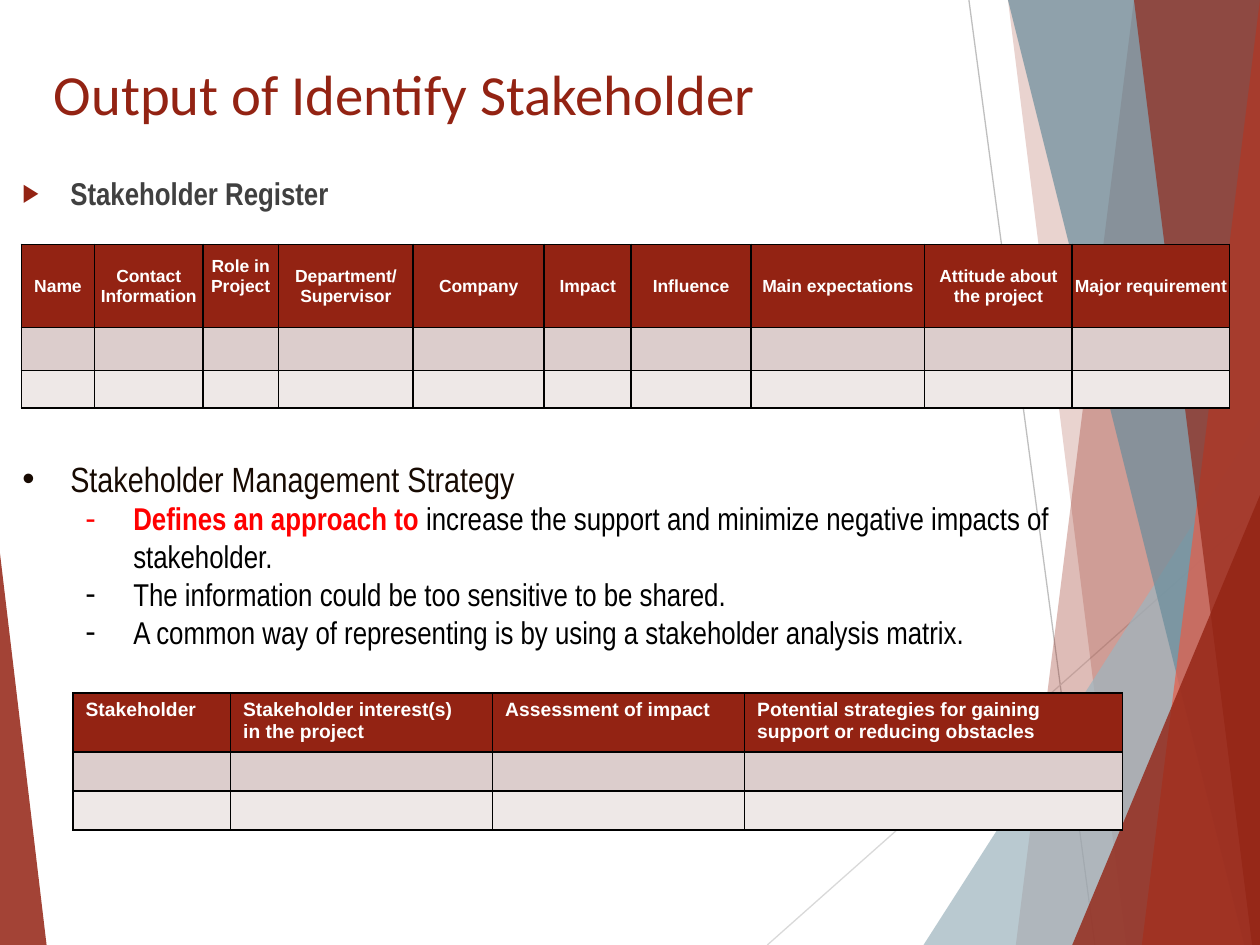
from lxml import etree
from pptx import Presentation
from pptx.dml.color import RGBColor
from pptx.enum.shapes import MSO_CONNECTOR, MSO_SHAPE
from pptx.enum.text import MSO_ANCHOR, PP_ALIGN
from pptx.oxml.ns import qn
from pptx.util import Inches, Pt

STRAIGHT = MSO_CONNECTOR.STRAIGHT
TRIANGLE = MSO_SHAPE.ISOSCELES_TRIANGLE
TOP, MIDDLE = MSO_ANCHOR.TOP, MSO_ANCHOR.MIDDLE
LEFT, CENTER = PP_ALIGN.LEFT, PP_ALIGN.CENTER

WIDTH, HEIGHT = 10, 7.5
BRICK = "932313"
BODY_FONT = "Arial Narrow"
ROW_FILLS = (BRICK, "DCCDCC", "EEE8E7")


def color(value):
    return RGBColor.from_string(value)


def sub(parent, tag, **attributes):
    return etree.SubElement(parent, qn(tag), attributes)


def paint(shape, fill, opacity):
    """Give a shape a translucent fill, no outline and no shadow."""
    shape.shadow.inherit = False
    shape.line.fill.background()
    shape.fill.solid()
    shape.fill.fore_color.rgb = color(fill)
    rgb = shape.fill._xPr.find(qn("a:solidFill"))[0]
    sub(rgb, "a:alpha", val=str(opacity * 1000))


def style(span, size, font, ink, bold=False):
    span.font.size = Pt(size)
    span.font.name = font
    span.font.color.rgb = color(ink)
    span.font.bold = bold


def add_ray(page, start, end, ink):
    ray = page.shapes.add_connector(STRAIGHT, *(Inches(v) for v in start + end))
    ray.line.color.rgb = color(ink)
    ray.line.width = Pt(0.75)
    sub(ray._element.spPr, "a:effectLst")


def add_band(page, top_left, bottom_left, fill, opacity):
    """A full-height band that reaches the right edge of the page."""
    builder = page.shapes.build_freeform(top_left, 0, scale=Inches(1))
    builder.add_line_segments(
        [(WIDTH, 0), (WIDTH, HEIGHT), (bottom_left, HEIGHT)], close=True)
    paint(builder.convert_to_shape(), fill, opacity)


def add_corner(page, box, apex, fill, opacity):
    corner = page.shapes.add_shape(TRIANGLE, *(Inches(v) for v in box))
    corner.adjustments[0] = apex
    paint(corner, fill, opacity)


def add_backdrop(page):
    add_ray(page, (7.69, 0), (8.69, HEIGHT), "BFBFBF")
    add_ray(page, (WIDTH, 4.03), (6.09, HEIGHT), "D9D9D9")
    add_band(page, 9.21, 7.53, BRICK, 30)
    add_band(page, 7.88, 8.87, BRICK, 20)
    add_corner(page, (7.33, 3.33, 2.67, 4.17), 1, "9EB5BF", 72)
    add_band(page, 7.66, 9.68, "698D9C", 70)
    add_band(page, 9.78, 8.94, "E75C48", 70)
    add_band(page, 8.97, 9.88, BRICK, 65)
    add_corner(page, (8.51, 3.93, 1.49, 3.57), 1, BRICK, 80)
    add_corner(page, (0, 4.39, 0.37, 3.11), 0, BRICK, 85)


def set_bullet(para, mark, indent, ink=None, percent=None):
    props = para._p.get_or_add_pPr()
    props.set("marL", str(Inches(indent)))
    props.set("indent", str(Inches(-0.38)))
    if ink:
        sub(sub(props, "a:buClr"), "a:srgbClr", val=ink)
    if percent:
        sub(props, "a:buSzPct", val=str(percent * 1000))
    sub(props, "a:buFont", typeface="Arial")
    sub(props, "a:buChar", char=mark)


def add_text_frame(page, box):
    frame = page.shapes.add_textbox(*(Inches(v) for v in box)).text_frame
    frame.word_wrap = True
    frame.vertical_anchor = TOP
    return frame


def add_title(page, box):
    frame = add_text_frame(page, box)
    frame.text = "Output of Identify Stakeholder"
    style(frame.paragraphs[0].runs[0], 32.4, "Calibri", BRICK)


def add_register_heading(page, box):
    frame = add_text_frame(page, box)
    frame.text = "Stakeholder Register"
    para = frame.paragraphs[0]
    para.space_before = Pt(10)
    set_bullet(para, "▶", 0.38, BRICK, 80)
    style(para.runs[0], 18, BODY_FONT, "404040", True)


def add_strategy(page, box):
    frame = add_text_frame(page, box)
    frame.text = "Stakeholder Management Strategy"
    heading = frame.paragraphs[0]
    set_bullet(heading, "•", 0.38)
    style(heading.runs[0], 20, BODY_FONT, "170A02")

    # Each point has an emphasised lead, which may be empty
    points = (
        ("Defines an approach to ",
         "increase the support and minimize negative impacts of stakeholder."),
        ("", "The information could be too sensitive to be shared."),
        ("", "A common way of representing is by using a stakeholder analysis matrix."),
    )
    for lead, rest in points:
        para = frame.add_paragraph()
        para.level = 1
        set_bullet(para, "-", 0.88)
        for text, ink, bold in ((lead, "FF0000", True), (rest, "000000", False)):
            if text:
                span = para.add_run()
                span.text = text
                style(span, 18, BODY_FONT, ink, bold)


def add_borders(cell):
    props = cell._tc.get_or_add_tcPr()
    for side in ("a:lnL", "a:lnR", "a:lnT", "a:lnB"):
        line = sub(props, side, w=str(Pt(1)))
        sub(sub(line, "a:solidFill"), "a:srgbClr", val="000000")


def add_form(page, box, columns, heights, size, align=LEFT, anchor=TOP, insets=None):
    """A header row over blank rows; columns are (heading, width) pairs."""
    frame = page.shapes.add_table(
        len(heights), len(columns), *(Inches(v) for v in box))
    table = frame.table
    for row, height in zip(table.rows, heights):
        row.height = Inches(height)
    for index, (heading, width) in enumerate(columns):
        table.columns[index].width = Inches(width)
        table.cell(0, index).text = heading
    for row, fill in zip(table.rows, ROW_FILLS):
        for cell in row.cells:
            add_borders(cell)
            cell.fill.solid()
            cell.fill.fore_color.rgb = color(fill)
            for para in cell.text_frame.paragraphs:
                for span in para.runs:
                    style(span, size, "Arial", "FFFFFF", True)
                if not para.runs:
                    sub(para._p, "a:endParaRPr", sz=str(size * 100))
                para.alignment = align
    for cell in table.rows[0].cells:
        cell.vertical_anchor = anchor
        if insets:
            (cell.margin_left, cell.margin_top, cell.margin_right,
             cell.margin_bottom) = (Inches(v) for v in insets)
    return table


def add_register(page, box):
    columns = (
        ("Name", 0.58), ("Contact Information", 0.86), ("Role in Project", 0.6),
        ("Department/\nSupervisor", 1.07), ("Company", 1.04), ("Impact", 0.69),
        ("Influence", 0.95), ("Main expectations", 1.38),
        ("Attitude about the project", 1.17), ("Major requirement", 1.25),
    )
    table = add_form(page, box, columns, (0.66, 0.34, 0.3), 10,
                     CENTER, MIDDLE, (0.01, 0.01, 0.01, 0))
    # The role heading sits a little higher than its neighbours
    table.cell(0, 2).margin_bottom = Inches(0.16)


def add_matrix(page, box):
    columns = (
        ("Stakeholder", 1.25), ("Stakeholder interest(s)  in the project", 2.08),
        ("Assessment of impact", 2),
        ("Potential strategies for gaining support or reducing obstacles", 3),
    )
    add_form(page, box, columns, (0.44, 0.31, 0.31), 11)


def main():
    deck = Presentation()
    deck.slide_width, deck.slide_height = Inches(WIDTH), Inches(HEIGHT)
    page = deck.slides.add_slide(deck.slide_layouts[6])
    add_backdrop(page)
    add_title(page, (0.33, 0.42, 8.33, 0.42))
    add_register_heading(page, (0.08, 1.33, 9.08, 0.5))
    add_matrix(page, (0.58, 5.5, 8.33, 1.06))
    add_register(page, (0.17, 1.94, 9.59, 1.3))
    add_strategy(page, (0.08, 3.58, 9.08, 1.83))
    deck.save("out.pptx")


if __name__ == "__main__":
    main()
